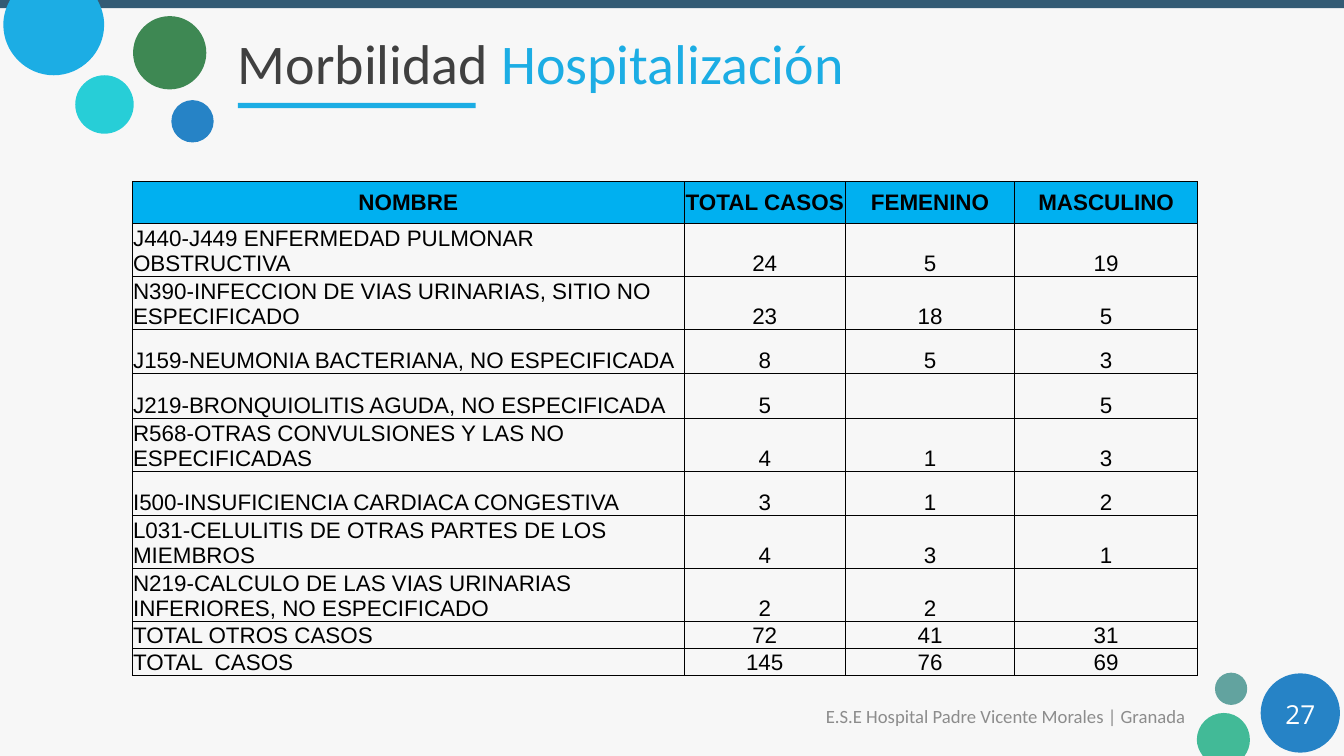
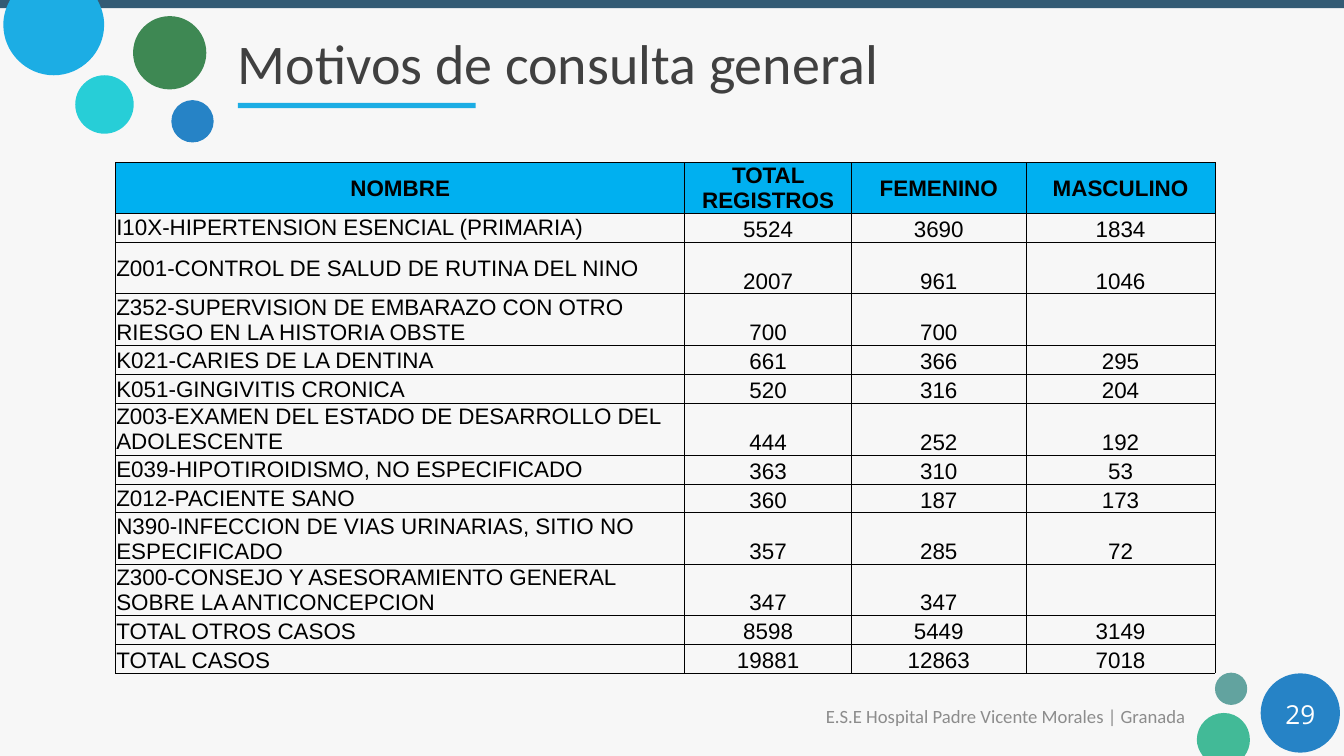
from lxml.etree import Element, SubElement
from pptx import Presentation
from pptx.dml.color import RGBColor
from pptx.enum.shapes import MSO_SHAPE as SHAPE
from pptx.enum.text import MSO_ANCHOR as ANCHOR, MSO_AUTO_SIZE, PP_ALIGN as ALIGN
from pptx.oxml.ns import qn
from pptx.util import Inches, Pt

WIDTH, HEIGHT = 20, 11.25

# Shared colours
PAPER, BAND, SKY, BLUE = "F7F7F7", "335B74", "1CADE4", "2683C6"
DARK, GREY, WHITE, BLACK, HEADER = "404040", "8C8C8C", "FFFFFF", "000000", "00B0F0"

FOOTER = "E.S.E Hospital Padre Vicente Morales | Granada"

# Decorative bubbles: left, top, diameter, colour
BUBBLES = [
    (2.55, 1.49, 0.63, BLUE),
    (1.12, 1.12, 0.87, "27CED7"),
    (1.98, 0.24, 1.09, "3E8853"),
    (18.08, 10.01, 0.48, "62A39F"),
    (18.76, 10.02, 1.18, BLUE),
]
# Bubbles cut by the slide edge: colour, then an outline of points;
# a step of three points is a curve, a step of one is a line
CUT_BUBBLES = [
    (SKY, [
        [(0.15, 0)],
        [(1.45, 0)],
        [(1.51, 0.11), (1.55, 0.23), (1.55, 0.37)],
        [(1.55, 0.78), (1.21, 1.12), (0.8, 1.12)],
        [(0.39, 1.12), (0.05, 0.78), (0.05, 0.37)],
        [(0.05, 0.23), (0.09, 0.11), (0.15, 0)],
    ]),
    ("42BA97", [
        [(18.21, 10.61)],
        [(18.43, 10.61), (18.6, 10.79), (18.6, 11.01)],
        [(18.6, 11.1), (18.57, 11.18), (18.52, 11.25)],
        [(17.9, 11.25)],
        [(17.85, 11.18), (17.81, 11.1), (17.81, 11.01)],
        [(17.81, 10.79), (17.99, 10.61), (18.21, 10.61)],
    ]),
]

# Table rows: height, name, total, women, men
HOSPITAL_ROWS = [
    (0.62, "NOMBRE", "TOTAL CASOS", "FEMENINO", "MASCULINO"),
    (0.79, "J440-J449 ENFERMEDAD PULMONAR OBSTRUCTIVA", 24, 5, 19),
    (0.79, "N390-INFECCION DE VIAS URINARIAS, SITIO NO ESPECIFICADO", 23, 18, 5),
    (0.66, "J159-NEUMONIA BACTERIANA, NO ESPECIFICADA", 8, 5, 3),
    (0.66, "J219-BRONQUIOLITIS AGUDA, NO ESPECIFICADA", 5, "", 5),
    (0.79, "R568-OTRAS CONVULSIONES Y LAS NO ESPECIFICADAS", 4, 1, 3),
    (0.66, "I500-INSUFICIENCIA CARDIACA CONGESTIVA", 3, 1, 2),
    (0.79, "L031-CELULITIS DE OTRAS PARTES DE LOS MIEMBROS", 4, 3, 1),
    (0.79, "N219-CALCULO DE LAS VIAS URINARIAS INFERIORES, NO ESPECIFICADO", 2, 2, ""),
    (0.4, "TOTAL OTROS CASOS", 72, 41, 31),
    (0.4, "TOTAL  CASOS", 145, 76, 69),
]
CONSULTATION_ROWS = [
    (0.73, "NOMBRE", "TOTAL REGISTROS", "FEMENINO", "MASCULINO"),
    (0.43, "I10X-HIPERTENSION ESENCIAL (PRIMARIA)", 5524, 3690, 1834),
    (0.77, "Z001-CONTROL DE SALUD DE RUTINA DEL NINO", 2007, 961, 1046),
    (0.77, "Z352-SUPERVISION DE EMBARAZO CON OTRO RIESGO EN LA HISTORIA OBSTE", 700, 700, ""),
    (0.43, "K021-CARIES DE LA DENTINA", 661, 366, 295),
    (0.43, "K051-GINGIVITIS CRONICA", 520, 316, 204),
    (0.77, "Z003-EXAMEN DEL ESTADO DE DESARROLLO DEL ADOLESCENTE", 444, 252, 192),
    (0.43, "E039-HIPOTIROIDISMO, NO ESPECIFICADO", 363, 310, 53),
    (0.43, "Z012-PACIENTE SANO", 360, 187, 173),
    (0.77, "N390-INFECCION DE VIAS URINARIAS, SITIO NO ESPECIFICADO", 357, 285, 72),
    (0.71, "Z300-CONSEJO Y ASESORAMIENTO GENERAL SOBRE LA ANTICONCEPCION", 347, 347, ""),
    (0.43, "TOTAL OTROS CASOS", 8598, 5449, 3149),
    (0.43, "TOTAL CASOS", 19881, 12863, 7018),
]


def rgb(color):
    return RGBColor.from_string(color)


def style(font, size, name, color, bold=False):
    font.size, font.name, font.bold = Pt(size), name, bold
    font.color.rgb = rgb(color)


def paint(sp, color):
    sp.shadow.inherit = False
    sp.fill.solid()
    sp.fill.fore_color.rgb = rgb(color)
    sp.line.fill.background()
    return sp


def add_solid(slide, kind, left, top, width, height, color):
    box = [Inches(v) for v in (left, top, width, height)]
    return paint(slide.shapes.add_shape(kind, *box), color)


def add_cut_bubble(slide, color, outline):
    ends = [(Inches(x), Inches(y)) for x, y in (step[-1] for step in outline)]
    builder = slide.shapes.build_freeform(*ends[0])
    builder.add_line_segments(ends[1:], close=True)
    sp = builder.convert_to_shape()
    # Turn the line steps that have control points into curves
    lines = list(sp.element.iter(qn("a:lnTo")))
    for line, step in zip(lines, outline[1:]):
        if len(step) == 3:
            line.tag = qn("a:cubicBezTo")
            for i, (x, y) in enumerate(step[:2]):
                line.insert(i, Element(qn("a:pt"), x=str(Inches(x) - sp.left),
                                       y=str(Inches(y) - sp.top)))
    return paint(sp, color)


def decorate_layout(slide):
    """Draw the band, bubbles and title underline, then move them to the layout."""
    parts = [add_solid(slide, SHAPE.RECTANGLE, 0, 0, WIDTH, 0.12, BAND)]
    for left, top, size, color in BUBBLES:
        parts.append(add_solid(slide, SHAPE.OVAL, left, top, size, size, color))
    for color, outline in CUT_BUBBLES:
        parts.append(add_cut_bubble(slide, color, outline))
    parts.append(add_solid(slide, SHAPE.RECTANGLE, 3.54, 1.53, 3.54, 0.08, SKY))
    for sp in parts:
        slide.slide_layout.shapes.element.append(sp.element)


def set_frame(tf):
    tf.word_wrap = True
    tf.auto_size = MSO_AUTO_SIZE.NONE
    tf.vertical_anchor = ANCHOR.MIDDLE
    tf.margin_left = tf.margin_right = Inches(0.18)
    tf.margin_top = tf.margin_bottom = Inches(0.09)


def add_label(slide, left, top, width, height, text, align, *font):
    box = [Inches(v) for v in (left, top, width, height)]
    tf = slide.shapes.add_textbox(*box).text_frame
    set_frame(tf)
    tf.text = text
    p = tf.paragraphs[0]
    p.alignment = align
    style(p.runs[0].font, *font)


def set_title(slide, parts):
    title = slide.shapes.title
    title.left, title.top = Inches(3.36), Inches(0.27)
    title.width, title.height = Inches(15.69), Inches(1.32)
    set_frame(title.text_frame)
    p = title.text_frame.paragraphs[0]
    p.alignment = ALIGN.LEFT
    for text, color in parts:
        r = p.add_run()
        r.text = text
        style(r.font, 60, "Calibri", color)


def add_page(prs, number, title_parts):
    slide = prs.slides.add_slide(prs.slide_layouts[5])
    set_title(slide, title_parts)
    add_label(slide, 11.49, 10.35, 6.33, 0.6, FOOTER, ALIGN.RIGHT, 20, "Calibri", GREY)
    add_label(slide, 18.76, 10.32, 1.18, 0.6, str(number), ALIGN.CENTER,
              28, "Open Sans", WHITE)
    return slide


def add_borders(cell):
    props = cell._tc.get_or_add_tcPr()
    for side in ("a:lnL", "a:lnR", "a:lnT", "a:lnB"):
        line = SubElement(props, qn(side), w=str(Pt(1)))
        fill = SubElement(line, qn("a:solidFill"))
        SubElement(fill, qn("a:srgbClr"), val=BLACK)


def fill_cell(cell, text, align, anchor, is_header):
    add_borders(cell)
    if is_header:
        cell.fill.solid()
        cell.fill.fore_color.rgb = rgb(HEADER)
    else:
        cell.fill.background()
    cell.margin_left = cell.margin_right = cell.margin_top = Inches(0.01)
    cell.margin_bottom = 0
    cell.vertical_anchor = anchor
    cell.text = str(text)
    p = cell.text_frame.paragraphs[0]
    p.alignment = align
    for r in p.runs:
        style(r.font, 24, "Arial", BLACK, is_header)


def add_cases_table(slide, left, top, widths, rows, name_anchor):
    height = sum(row[0] for row in rows)
    table = slide.shapes.add_table(len(rows), len(widths), Inches(left), Inches(top),
                                   Inches(sum(widths)), Inches(height)).table
    table.horz_banding = False
    for column, width in zip(table.columns, widths):
        column.width = Inches(width)
    for i, (row_height, *values) in enumerate(rows):
        table.rows[i].height = Inches(row_height)
        is_header = i == 0
        is_total = values[0].startswith("TOTAL")
        for j, value in enumerate(values):
            is_name = j == 0 and not is_header
            anchor = ANCHOR.MIDDLE if is_header else ANCHOR.BOTTOM
            if is_name and not is_total:
                anchor = name_anchor
            align = ALIGN.LEFT if is_name else ALIGN.CENTER
            fill_cell(table.cell(i, j), value, align, anchor, is_header)


def main():
    prs = Presentation()
    prs.slide_width, prs.slide_height = Inches(WIDTH), Inches(HEIGHT)
    background = prs.slide_master.background.fill
    background.solid()
    background.fore_color.rgb = rgb(PAPER)

    # Hospital admissions
    slide = add_page(prs, 27, [("Morbilidad ", DARK), ("Hospitalización", SKY)])
    decorate_layout(slide)
    add_cases_table(slide, 1.97, 2.7, [8.21, 2.4, 2.52, 2.72],
                    HOSPITAL_ROWS, ANCHOR.BOTTOM)

    # General consultations
    slide = add_page(prs, 29, [("Motivos de consulta general", DARK)])
    add_cases_table(slide, 1.72, 2.42, [8.47, 2.48, 2.6, 2.81],
                    CONSULTATION_ROWS, ANCHOR.MIDDLE)

    prs.save("out.pptx")


if __name__ == "__main__":
    main()
